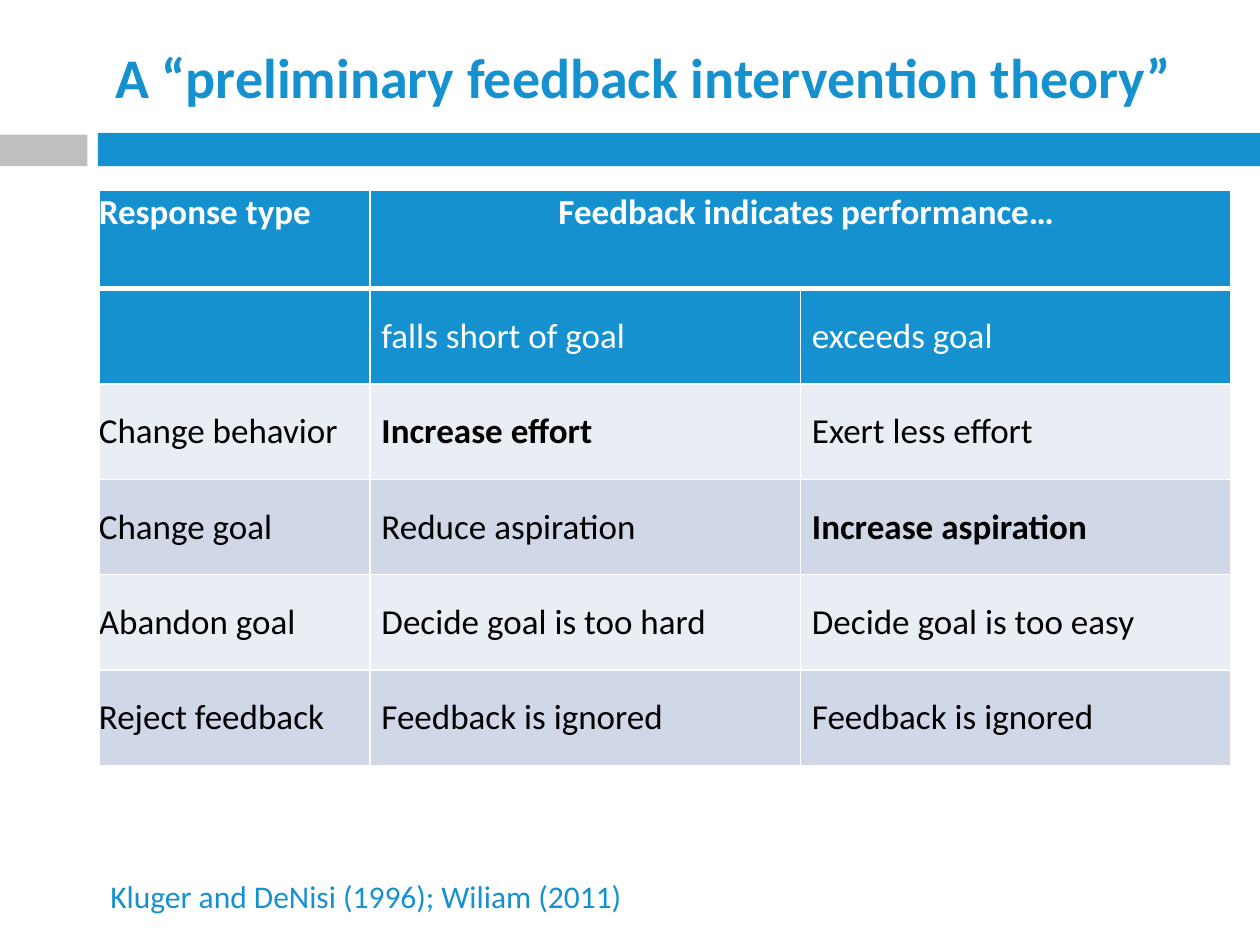
from lxml import etree
from pptx import Presentation
from pptx.dml.color import RGBColor
from pptx.enum import shapes, text
from pptx.oxml import ns
from pptx.util import Pt

COLORS = {"blue": "1691D0", "gray": "BFBFBF", "white": "FFFFFF", "black": "000000",
          "light": "E9EDF4", "dark": "D0D8E8"}
LEFT = 56
COLUMN_WIDTHS = [155, 246, 246]
ROW_HEIGHTS = [56] + [54.5] * 5
RESPONSES = [
    ["Response type", "Feedback indicates performance…", ""],
    ["", "falls short of goal", "exceeds goal"],
    ["Change behavior", "Increase effort", "Exert less effort"],
    ["Change goal", "Reduce aspiration", "Increase aspiration"],
    ["Abandon goal", "Decide goal is too hard", "Decide goal is too easy"],
    ["Reject feedback", "Feedback is ignored", "Feedback is ignored"],
]
RECOMMENDED = {"Increase effort", "Increase aspiration"}


def rgb(name):
    return RGBColor.from_string(COLORS[name])


class SlideBuilder:
    font = "Calibri"

    def __init__(self, slide):
        self.slide = slide

    def run(self, paragraph, words, size, color, bold=False):
        run = paragraph.add_run()
        run.text = words
        run.font.name, run.font.size, run.font.bold = self.font, Pt(size), bold
        run.font.color.rgb = rgb(color)

    def bar(self, left, top, width, height, color):
        bar = self.slide.shapes.add_shape(shapes.MSO_SHAPE.RECTANGLE,
                                          Pt(left), Pt(top), Pt(width), Pt(height))
        bar.shadow.inherit = False
        bar.fill.solid()
        bar.fill.fore_color.rgb = rgb(color)
        bar.line.fill.background()

    def title(self, words, left, top, width, height):
        title = self.slide.shapes.title
        title.left, title.top, title.width, title.height = map(Pt, (left, top, width, height))
        frame = title.text_frame
        frame.vertical_anchor = text.MSO_ANCHOR.MIDDLE
        frame.auto_size = text.MSO_AUTO_SIZE.NONE
        frame.paragraphs[0].alignment = text.PP_ALIGN.CENTER
        self.run(frame.paragraphs[0], words, 32, "blue", bold=True)

    def citation(self, words, left, top, width, height):
        box = self.slide.shapes.add_textbox(Pt(left), Pt(top), Pt(width), Pt(height))
        box.text_frame.word_wrap = True
        box.text_frame.auto_size = text.MSO_AUTO_SIZE.SHAPE_TO_FIT_TEXT
        self.run(box.text_frame.paragraphs[0], words, 18, "blue")

    def borders(self, cell, bottom):
        """Draw white cell borders, 1 pt wide except for the given bottom width."""
        properties = cell._tc.get_or_add_tcPr()
        for place, (side, width) in enumerate(
                [("lnL", 1), ("lnR", 1), ("lnT", 1), ("lnB", bottom)]):
            line = etree.Element(ns.qn(f"a:{side}"), w=str(Pt(width)))
            fill = etree.SubElement(line, ns.qn("a:solidFill"))
            etree.SubElement(fill, ns.qn("a:srgbClr"), val=COLORS["white"])
            properties.insert(place, line)

    def cell(self, cell, words, fill, color, bold, indent, heading):
        cell.fill.solid()
        cell.fill.fore_color.rgb = rgb(fill)
        self.borders(cell, 3 if heading else 1)
        cell.margin_left = cell.margin_right = cell.margin_top = cell.margin_bottom = 0
        cell.vertical_anchor = text.MSO_ANCHOR.TOP if heading else text.MSO_ANCHOR.MIDDLE
        if not words:
            return
        paragraph = cell.text_frame.paragraphs[0]
        paragraph.space_after = Pt(4)
        paragraph._p.get_or_add_pPr().set("marL", str(Pt(indent)))
        if heading and indent:
            paragraph.alignment = text.PP_ALIGN.CENTER
        self.run(paragraph, words, 20, color, bold)

    def table(self, rows, left, top):
        table = self.slide.shapes.add_table(
            len(rows), len(COLUMN_WIDTHS), Pt(left), Pt(top),
            Pt(sum(COLUMN_WIDTHS)), Pt(sum(ROW_HEIGHTS))).table
        for column, width in zip(table.columns, COLUMN_WIDTHS):
            column.width = Pt(width)
        for row, height in zip(table.rows, ROW_HEIGHTS):
            row.height = Pt(height)
        table.cell(0, 1).merge(table.cell(0, 2))
        for r, row in enumerate(rows):
            in_header = r < 2
            fill = "blue" if in_header else ("light", "dark")[r % 2]
            for c, words in enumerate(row):
                self.cell(table.cell(r, c), words, fill,
                          color="white" if in_header else "black",
                          bold=r == 0 or words in RECOMMENDED,
                          indent=6.5 if c else 0, heading=r == 0)


def main():
    deck = Presentation()
    deck.slide_width, deck.slide_height = Pt(720), Pt(540)
    builder = SlideBuilder(deck.slides.add_slide(deck.slide_layouts[5]))
    builder.bar(LEFT, 76, 720 - LEFT, 19, "blue")
    builder.bar(0, 77, 50, 18, "gray")
    builder.title("A “preliminary feedback intervention theory”", LEFT, 19, 624, 49)
    builder.table(RESPONSES, LEFT + 0.5, 109)
    builder.citation("Kluger and DeNisi (1996); Wiliam (2011)", LEFT, 497.5, 416, 29)
    deck.save("out.pptx")


if __name__ == "__main__":
    main()
